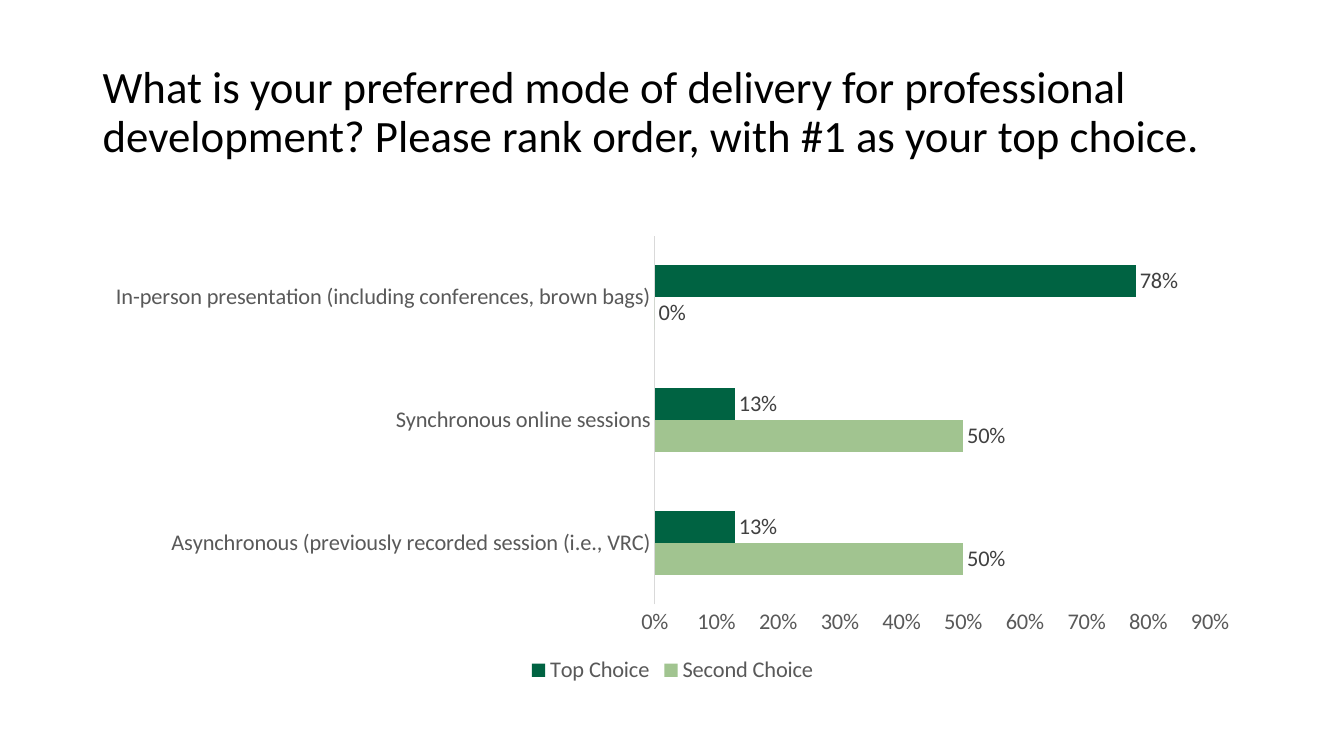
from pptx import Presentation
from pptx.chart.data import CategoryChartData
from pptx.dml.color import RGBColor
from pptx.enum.chart import XL_CHART_TYPE, XL_LABEL_POSITION, XL_LEGEND_POSITION, XL_TICK_MARK
from pptx.enum.text import MSO_ANCHOR
from pptx.util import Inches, Pt

BLACK = RGBColor(0x00, 0x00, 0x00)
AXIS_TEXT = RGBColor(0x59, 0x59, 0x59)
LABEL_TEXT = RGBColor(0x40, 0x40, 0x40)
AXIS_LINE = RGBColor(0xD9, 0xD9, 0xD9)
DARK_GREEN = RGBColor(0x00, 0x63, 0x42)
LIGHT_GREEN = RGBColor(0xA1, 0xC4, 0x90)

TITLE = (
    "What is your preferred mode of delivery for professional development? "
    "Please rank order, with #1 as your top choice."
)
DELIVERY_MODES = (
    "Asynchronous (previously recorded session (i.e., VRC)",
    "Synchronous online sessions",
    "In-person presentation (including conferences, brown bags)",
)
CHOICES = (
    ("Second Choice", (0.5, 0.5, 0), LIGHT_GREEN),
    ("Top Choice", (0.13, 0.13, 0.78), DARK_GREEN),
)


def set_attributes(target, values):
    """Set each named attribute of the target."""
    for name, value in values.items():
        setattr(target, name, value)


def format_font(font, size, color):
    """Apply the slide font in the given size and colour."""
    set_attributes(font, {"name": "Calibri", "size": Pt(size), "bold": False})
    font.color.rgb = color


def add_title(slide, left, top, width, height):
    """Place the question in its box."""
    shape = slide.shapes.add_textbox(*map(Inches, (left, top, width, height)))
    set_attributes(shape.text_frame, {"word_wrap": True, "vertical_anchor": MSO_ANCHOR.MIDDLE})
    paragraph = shape.text_frame.paragraphs[0]
    paragraph.line_spacing = 0.9
    run = paragraph.add_run()
    run.text = TITLE
    format_font(run.font, 32, BLACK)


def add_ranking_chart(slide, left, top, width, height):
    """Place the bar chart of first and second choices in its box."""
    chart_data = CategoryChartData(number_format="0%")
    chart_data.categories = DELIVERY_MODES
    for name, values, _ in CHOICES:
        chart_data.add_series(name, values)
    box = map(Inches, (left, top, width, height))
    chart = slide.shapes.add_chart(XL_CHART_TYPE.BAR_CLUSTERED, *box, chart_data).chart
    set_attributes(chart, {"has_title": False, "has_legend": True})
    format_font(chart.font, 16, BLACK)
    set_attributes(
        chart.legend, {"position": XL_LEGEND_POSITION.BOTTOM, "include_in_layout": False}
    )
    format_font(chart.legend.font, 16, AXIS_TEXT)

    for axis in (chart.category_axis, chart.value_axis):
        set_attributes(axis, {
            "major_tick_mark": XL_TICK_MARK.NONE,
            "minor_tick_mark": XL_TICK_MARK.NONE,
            "has_major_gridlines": False,
        })
        format_font(axis.tick_labels.font, 16, AXIS_TEXT)
    category_line = chart.category_axis.format.line
    category_line.color.rgb = AXIS_LINE
    category_line.width = Pt(0.75)
    set_attributes(
        chart.value_axis, {"minimum_scale": 0, "maximum_scale": 0.9, "major_unit": 0.1}
    )
    chart.value_axis.format.line.fill.background()
    percent_format = {"number_format": "0%", "number_format_is_linked": False}
    set_attributes(chart.value_axis.tick_labels, percent_format)

    plot = chart.plots[0]
    set_attributes(plot, {"gap_width": 182, "overlap": 0, "vary_by_categories": False})
    for series, (_, _, color) in zip(plot.series, CHOICES):
        series.format.fill.solid()
        series.format.fill.fore_color.rgb = color
        set_attributes(series.data_labels, {
            "show_value": True,
            "position": XL_LABEL_POSITION.OUTSIDE_END,
            **percent_format,
        })
        format_font(series.data_labels.font, 16, LABEL_TEXT)


def main():
    """Build the survey slide and save it."""
    presentation = Presentation()
    set_attributes(presentation, {"slide_width": Inches(13.33), "slide_height": Inches(7.5)})
    slide = presentation.slides.add_slide(presentation.slide_layouts[6])
    add_title(slide, 0.92, 0.4, 11.5, 1.45)
    add_ranking_chart(slide, 0.92, 2.25, 11.5, 4.58)
    presentation.save("out.pptx")


if __name__ == "__main__":
    main()
